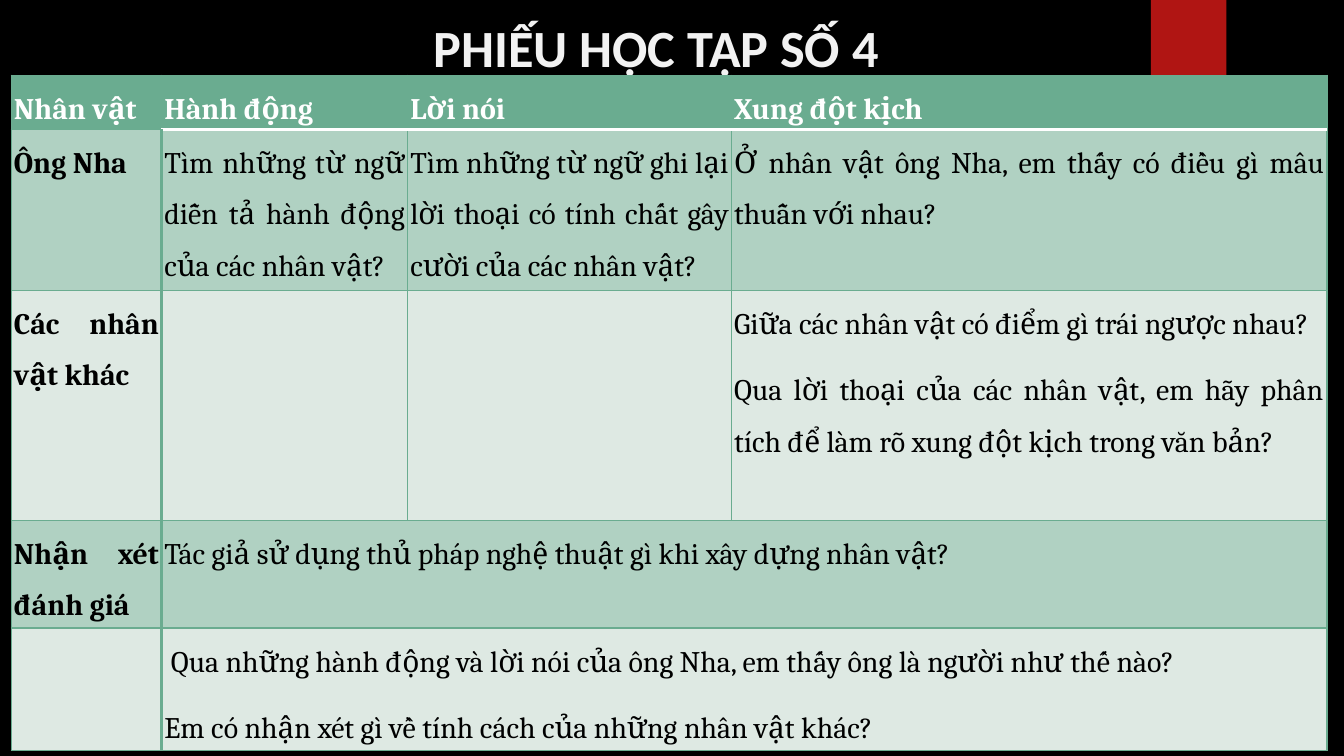
import pptx
import pptx.dml.color
import pptx.enum.shapes
import pptx.enum.text
import pptx.util
from lxml import etree
from pptx.oxml.ns import qn

Pt = pptx.util.Pt
RGBColor = pptx.dml.color.RGBColor
PP_ALIGN = pptx.enum.text.PP_ALIGN

BLACK = RGBColor(0, 0, 0)
WHITE = RGBColor(255, 255, 255)
OFF_WHITE = RGBColor(0xF2, 0xF2, 0xF2)
RED = RGBColor(0xB0, 0x15, 0x13)
GREEN = RGBColor(0x6A, 0xAC, 0x90)
DARK_BAND = RGBColor(0xB0, 0xD1, 0xC2)
LIGHT_BAND = RGBColor(0xDE, 0xE9, 0xE3)

THIN, THICK = 0.75, 1.5


class WorksheetSlide:
    title_font = {"name": "Calibri", "size": Pt(28), "bold": True}
    cell_font = {"name": "Cambria", "size": Pt(16)}
    cell_paragraph = {"alignment": PP_ALIGN.JUSTIFY, "line_spacing": 1.5,
                      "space_after": Pt(8)}
    title_frame = {"word_wrap": True,
                   "vertical_anchor": pptx.enum.text.MSO_ANCHOR.MIDDLE,
                   "margin_left": Pt(7.2), "margin_right": Pt(7.2),
                   "margin_top": Pt(7.2), "margin_bottom": Pt(7.2)}
    cell_margins = {"margin_left": Pt(1.5), "margin_right": Pt(1.5),
                    "margin_top": 0, "margin_bottom": 0}

    def __init__(self, slide):
        self.slide = slide
        slide.background.fill.solid()
        slide.background.fill.fore_color.rgb = BLACK

    @staticmethod
    def apply(target, values):
        for key, value in values.items():
            setattr(target, key, value)

    def add_text(self, paragraph, text, font, color):
        run = paragraph.add_run()
        run.text = text
        self.apply(run.font, font)
        run.font.color.rgb = color

    def block(self, left, top, width, height, color):
        bookmark = self.slide.shapes.add_shape(
            pptx.enum.shapes.MSO_SHAPE.RECTANGLE,
            Pt(left), Pt(top), Pt(width), Pt(height))
        bookmark.shadow.inherit = False
        bookmark.fill.solid()
        bookmark.fill.fore_color.rgb = color
        bookmark.line.fill.background()

    def title(self, left, top, width, height, text):
        frame = self.slide.shapes.add_textbox(
            Pt(left), Pt(top), Pt(width), Pt(height)).text_frame
        self.apply(frame, self.title_frame)
        heading = frame.paragraphs[0]
        heading.alignment = PP_ALIGN.CENTER
        self.add_text(heading, text, self.title_font, OFF_WHITE)

    def border(self, cell, side, color, width):
        line = etree.SubElement(cell._tc.get_or_add_tcPr(), qn("a:ln" + side),
                                w=str(int(Pt(width))))
        fill = etree.SubElement(line, qn("a:solidFill"))
        etree.SubElement(fill, qn("a:srgbClr"), val=str(color))

    def cell(self, cell, paragraphs, fill, color, bold, borders):
        for side, (line_color, width) in borders.items():
            self.border(cell, side, line_color, width)
        cell.fill.solid()
        cell.fill.fore_color.rgb = fill
        if not paragraphs:
            return
        self.apply(cell, self.cell_margins)
        for index, text in enumerate(paragraphs):
            frame = cell.text_frame
            paragraph = frame.add_paragraph() if index else frame.paragraphs[0]
            self.apply(paragraph, self.cell_paragraph)
            self.add_text(paragraph, text, {**self.cell_font, "bold": bold}, color)

    def table(self, left, top, widths, heights, content, merged_rows):
        frame = self.slide.shapes.add_table(
            len(heights), len(widths), Pt(left), Pt(top),
            Pt(sum(widths)), Pt(sum(heights)))
        grid = frame.table
        for column, width in zip(grid.columns, widths):
            column.width = Pt(width)
        for row, height in zip(grid.rows, heights):
            row.height = Pt(height)
        for r in merged_rows:
            grid.cell(r, 1).merge(grid.cell(r, len(widths) - 1))
        for r, texts in enumerate(content):
            band = GREEN if r == 0 else DARK_BAND if r % 2 else LIGHT_BAND
            for c, paragraphs in enumerate(texts):
                # The header rule is white except above the name column
                rule = (WHITE, THICK) if c else (GREEN, THIN)
                edge = (GREEN, THIN)
                spine = (GREEN, THICK if r else THIN)
                borders = {"L": spine if c == 1 else edge,
                           "R": spine if c == 0 else edge,
                           "T": rule if r == 1 else edge,
                           "B": rule if r == 0 else edge}
                self.cell(grid.cell(r, c), paragraphs, band,
                          BLACK if r else WHITE, r == 0 or c == 0, borders)


def main():
    deck = pptx.Presentation()
    deck.slide_width, deck.slide_height = Pt(720), Pt(405)
    worksheet = WorksheetSlide(deck.slides.add_slide(deck.slide_layouts[6]))

    # Red bookmark and title
    worksheet.block(616.5, 0, 40.5, 67.5, RED)
    worksheet.title(49, 0, 605, 50.5, "PHIẾU HỌC TẬP SỐ 4")

    # Character worksheet: each cell is a list of paragraphs
    rows = [
        [["Nhân vật"], ["Hành động"], ["Lời nói"], ["Xung đột kịch"]],
        [["Ông Nha"],
         ["Tìm những từ ngữ diễn tả hành động của các nhân vật?"],
         ["Tìm những từ ngữ ghi lại lời thoại có tính chất gây cười của các nhân vật?"],
         ["Ở nhân vật ông Nha, em thấy có điều gì mâu thuẫn với nhau? "]],
        [["Các nhân vật khác"], [], [],
         ["Giữa các nhân vật có điểm gì trái ngược nhau?",
          "Qua lời thoại của các nhân vật, em hãy phân tích để làm rõ "
          "xung đột kịch trong văn bản?"]],
        [["Nhận xét đánh giá"],
         ["Tác giả sử dụng thủ pháp nghệ thuật gì khi xây dựng nhân vật?"], [], []],
        [[],
         [" Qua những hành động và lời nói của ông Nha, em thấy ông là người như thế nào?",
          "Em có nhận xét gì về tính cách của những nhân vật khác?"], [], []],
    ]
    worksheet.table(6, 40.3, widths=[80.6, 131.8, 173.5, 319],
                    heights=[29, 86, 123.2, 57.6, 65.5],
                    content=rows, merged_rows=[3, 4])

    deck.save("out.pptx")


if __name__ == "__main__":
    main()
